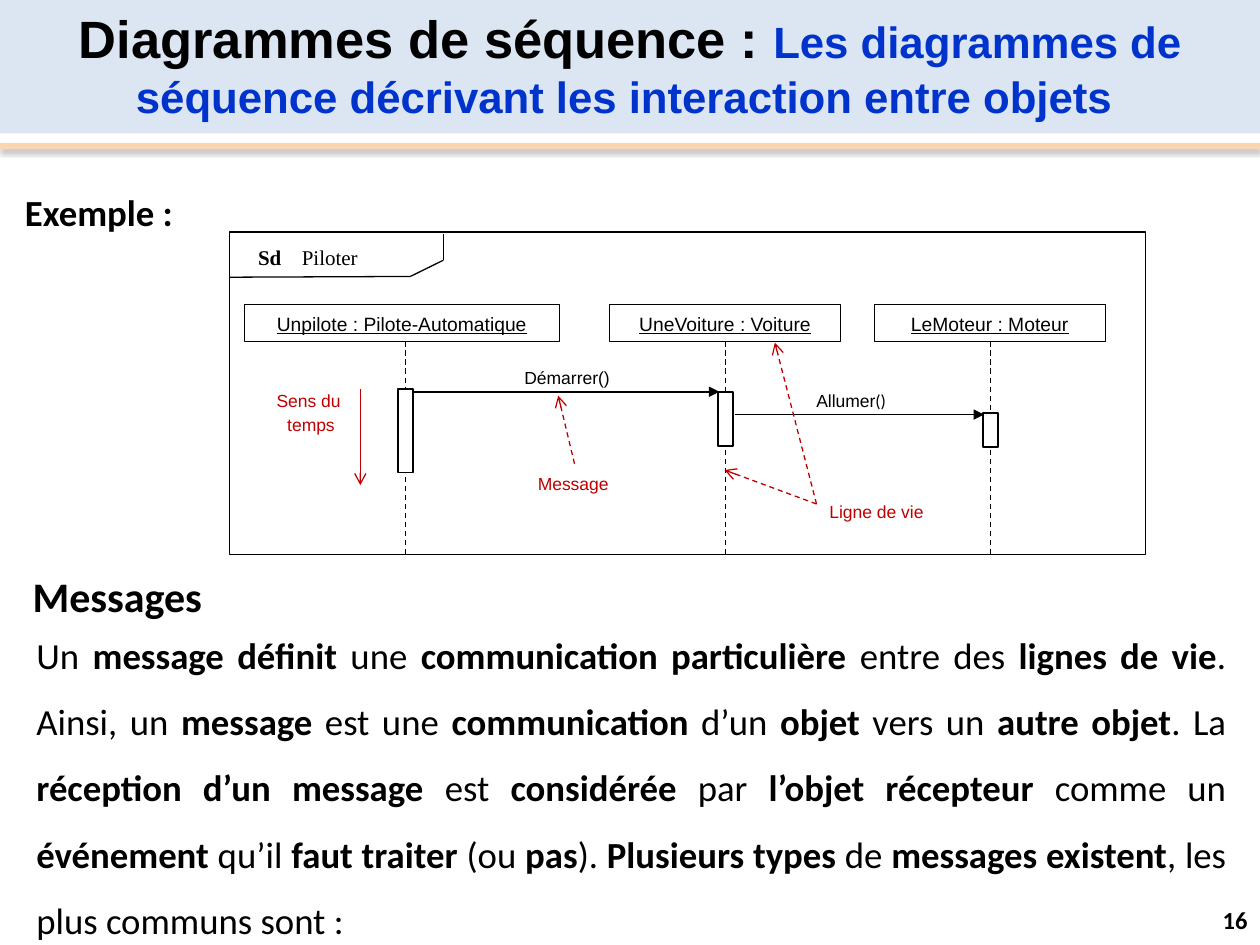
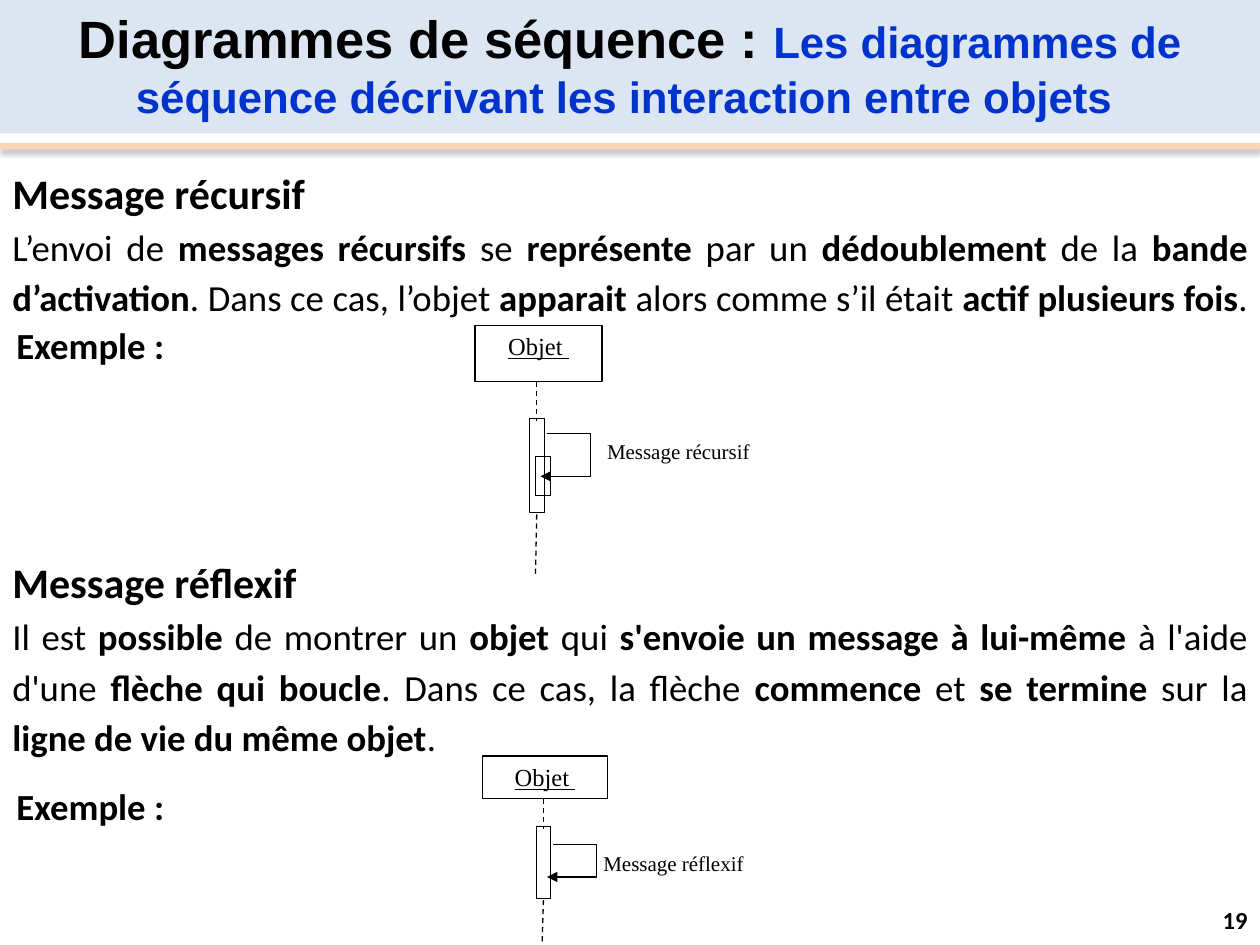
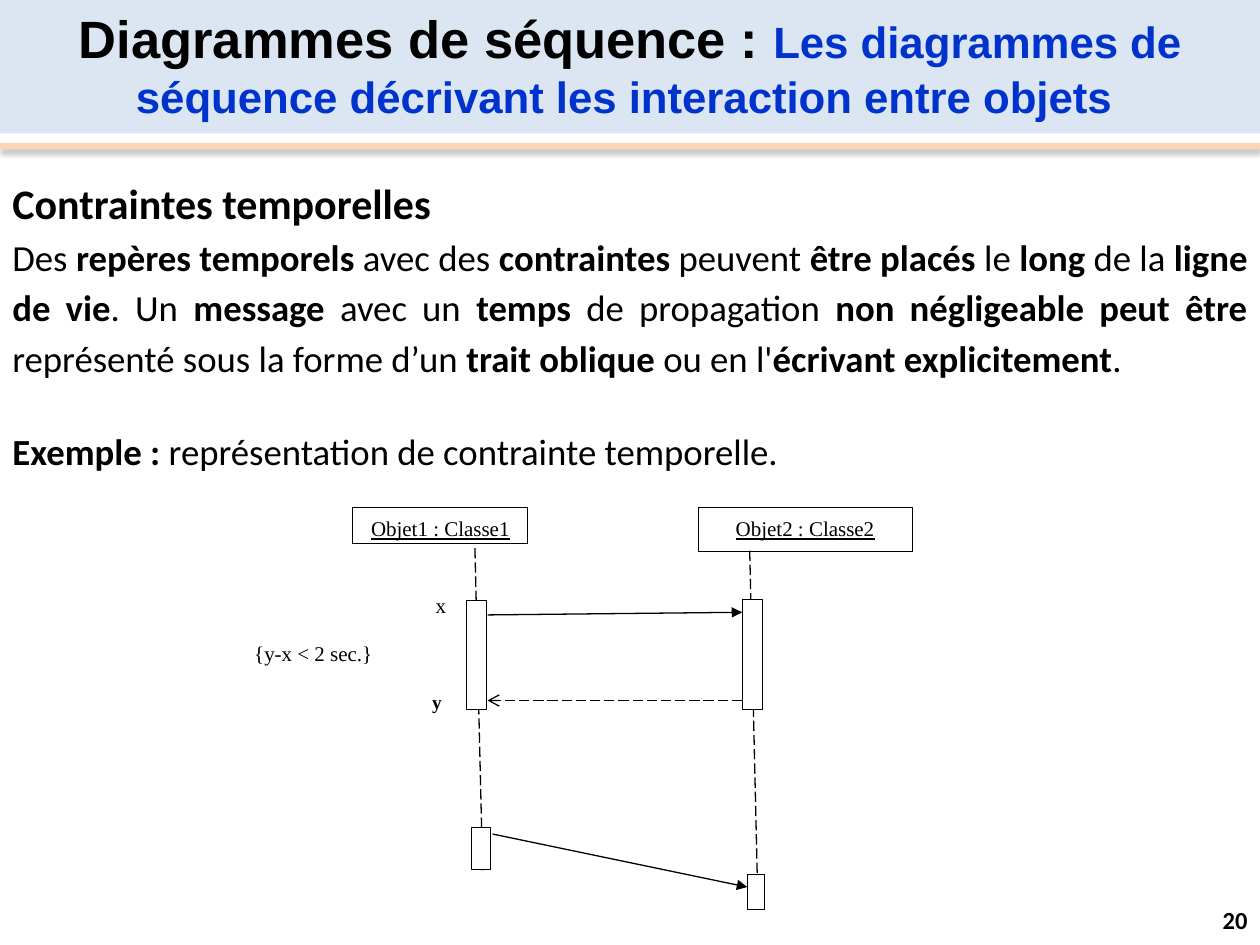
from pptx import Presentation
from pptx.dml.color import RGBColor
from pptx.enum.dml import MSO_LINE
from pptx.enum.shapes import MSO_CONNECTOR as CONNECTOR, MSO_SHAPE as SHAPE
from pptx.enum.text import MSO_ANCHOR as ANCHOR, PP_ALIGN as ALIGN
from pptx.oxml.ns import qn
from pptx.util import Pt
from lxml.etree import SubElement
from itertools import pairwise

BLACK = RGBColor(0x00, 0x00, 0x00)
WHITE = RGBColor(0xFF, 0xFF, 0xFF)
RED = RGBColor(0xC0, 0x00, 0x00)
BLUE = RGBColor(0x00, 0x33, 0xCC)
PALE_BLUE = RGBColor(0xDC, 0xE6, 0xF2)
PEACH = RGBColor(0xFC, 0xD5, 0xB5)

BODY, SANS, SERIF = "Calibri", "Arial", "Times New Roman"
WIDTH, HEIGHT = 720, 540
LOOP_BACK, LOOP_REACH = 3.6, 24.8


class Deck:
    """Hold the shared style and the current slide."""

    def __init__(self):
        self.presentation = Presentation()
        self.presentation.slide_width = Pt(WIDTH)
        self.presentation.slide_height = Pt(HEIGHT)
        self.slide = None

    def new_slide(self, number):
        self.slide = self.presentation.slides.add_slide(self.presentation.slide_layouts[6])
        page = self.text_box(552, 511, 168, 29)
        page.vertical_anchor = ANCHOR.MIDDLE
        self.add_text(page, f"*{number}*", 14, align=ALIGN.RIGHT)

        rule = self.line((0, 83.5), (WIDTH, 83.5), PEACH, 3)
        effects = rule.element.spPr.find(qn("a:effectLst"))
        shadow = SubElement(effects, qn("a:outerShdw"), blurRad=str(Pt(3.1)),
                            dist=str(Pt(1.8)), dir="5400000", rotWithShape="0")
        color = SubElement(shadow, qn("a:srgbClr"), val=str(BLACK))
        SubElement(color, qn("a:alpha"), val="35000")

        band = self.box(0, -2.9, WIDTH, 79.2, PALE_BLUE, None).text_frame
        band.vertical_anchor = ANCHOR.MIDDLE
        title = self.add_text(band, "*Diagrammes de séquence : *", 30, SANS, align=ALIGN.CENTER)
        self.add_run(title, "Les diagrammes de séquence décrivant les interaction entre objets ",
                     25, SANS, BLUE, bold=True)

    def add_run(self, paragraph, text, size, font=BODY, color=BLACK, bold=False, underline=False):
        run = paragraph.add_run()
        run.text = text
        run.font.name, run.font.size = font, Pt(size)
        run.font.bold, run.font.underline = bold, underline
        run.font.color.rgb = color

    def add_text(self, frame, markup, size, font=BODY, color=BLACK, align=ALIGN.JUSTIFY,
                 spacing=1.0, underline=False):
        """Add a paragraph in which asterisks switch bold on and off."""
        frame.word_wrap = True
        paragraph = frame.paragraphs[0]
        if paragraph.runs:
            paragraph = frame.add_paragraph()
        paragraph.alignment, paragraph.line_spacing = align, spacing
        for index, text in enumerate(markup.split("*")):
            if text:
                self.add_run(paragraph, text, size, font, color, index % 2 == 1, underline)
        return paragraph

    def text_box(self, left, top, width, height):
        return self.slide.shapes.add_textbox(Pt(left), Pt(top), Pt(width), Pt(height)).text_frame

    def section(self, top, height, heading, body):
        frame = self.text_box(0, top, WIDTH, height)
        self.add_text(frame, f"*{heading}*", 24, spacing=1.5)
        self.add_text(frame, body, 21, spacing=1.15)

    def paragraph_box(self, left, top, width, height, markup, size=21, spacing=1.15):
        self.add_text(self.text_box(left, top, width, height), markup, size, spacing=spacing)

    def box(self, left, top, width, height, fill=WHITE, weight=1.0):
        shape = self.slide.shapes.add_shape(SHAPE.RECTANGLE, Pt(left), Pt(top), Pt(width), Pt(height))
        shape.shadow.inherit = False
        if fill is None:
            shape.fill.background()
        else:
            shape.fill.solid()
            shape.fill.fore_color.rgb = fill
        if weight is None:
            shape.line.fill.background()
        else:
            shape.line.color.rgb = BLACK
            shape.line.width = Pt(weight)
        shape.text_frame.vertical_anchor = ANCHOR.TOP
        return shape

    def label(self, left, top, width, height, markup, size=12, font=SERIF, color=BLACK,
              align=ALIGN.LEFT, spacing=1.06):
        frame = self.box(left, top, width, height, WHITE, None).text_frame
        return [self.add_text(frame, line, size, font, color, align, spacing)
                for line in markup.split("\n")]

    def participant(self, left, top, width, height, name, size=12, font=SERIF,
                    spacing=1.06, weight=0.5):
        frame = self.box(left, top, width, height, WHITE, weight).text_frame
        self.add_text(frame, name, size, font, align=ALIGN.CENTER, spacing=spacing, underline=True)

    def line(self, start, end, color=BLACK, weight=0.75, dash=None, arrow=None,
             kind=CONNECTOR.STRAIGHT):
        connector = self.slide.shapes.add_connector(kind, *map(Pt, start + end))
        connector.line.color.rgb = color
        connector.line.width = Pt(weight)
        if dash:
            connector.line.dash_style = dash
        properties = connector.element.spPr
        if arrow:
            SubElement(properties.find(qn("a:ln")), qn("a:tailEnd"), type=arrow)
        SubElement(properties, qn("a:effectLst"))
        return connector

    def self_call(self, head, bar, loop_top, loop_bottom, life_end, label, text):
        self.label(*label, text, spacing=1.0)
        self.participant(*head, "Objet ", 14, spacing=1.0, weight=0.75)
        left, top, width, height = bar
        self.box(*bar, None, 0.75)
        center = left + width / 2
        self.line((center, head[1] + head[3]), (center, top + 1.5), dash=MSO_LINE.DASH)
        self.line((center, top + height + 1), (center - 0.7, life_end), dash=MSO_LINE.DASH)
        start = left + width + 1.5
        loop = self.line((start, loop_top), (start - LOOP_BACK, loop_bottom),
                         arrow="triangle", kind=CONNECTOR.ELBOW)
        guides = loop.element.spPr.find(qn("a:prstGeom")).find(qn("a:avLst"))
        bend = round(-100000 * LOOP_REACH / LOOP_BACK)
        SubElement(guides, qn("a:gd"), name="adj1", fmla=f"val {bend}")


def driving_slide(deck):
    deck.new_slide(16)
    deck.paragraph_box(7.2, 92.2, 705.6, 41.8, "*Exemple :*", spacing=1.5)
    deck.paragraph_box(11.5, 318.2, 364, 39, "*Messages*", 24)
    deck.paragraph_box(
        13.7, 345.6, 694, 194.4,
        "Un *message définit* une *communication particulière* entre des *lignes de vie*. "
        "Ainsi, un *message* est une *communication* d’un *objet* vers un *autre objet*. "
        "La *réception d’un message *est *considérée* par *l’objet récepteur *comme un "
        "*événement* qu’il *faut traiter *(ou *pas*). *Plusieurs types* de "
        "*messages existent*, les plus communs sont :", spacing=1.5)

    deck.box(131, 132.5, 523.5, 184.5, weight=0.75)
    frame_name = deck.text_box(140.4, 135.4, 91.4, 22.3)
    paragraph = deck.add_text(frame_name, "*Sd*\tPiloter", 12, SERIF, align=ALIGN.LEFT,
                              spacing=1.06)
    tabs = SubElement(paragraph._p.get_or_add_pPr(), qn("a:tabLst"))
    SubElement(tabs, qn("a:tab"), pos=str(Pt(25)), algn="l")
    for start, end in pairwise([(253.4, 134), (253.4, 148.7), (234.5, 158), (131, 158.4)]):
        deck.line(start, end)

    for left, top, width, height, text, color in (
        (145.4, 217.4, 61.9, 33.1, "Sens du\n temps", RED),
        (277.9, 204.5, 92.2, 18, "Démarrer()", BLACK),
        (289.4, 265, 76.3, 20.9, "Message", RED),
        (459.4, 280.8, 82.8, 21.6, "Ligne de vie", RED),
    ):
        deck.label(left, top, width, height, text, 10, SANS, color, ALIGN.CENTER, 1.15)
    call = deck.label(459.4, 217.4, 70.6, 18.7, "Allumer", 10, SANS, spacing=1.15)
    deck.add_run(call[0], "()", 10)

    for left, width, name, life, bar_top, bar_height in (
        (139.7, 180, "Unpilote : Pilote-Automatique", 231.8, 222.5, 47.5),
        (348.5, 131.8, "UneVoiture : Voiture", 414.5, 223.9, 31),
        (499.7, 131.8, "LeMoteur : Moteur", 565.9, 236.2, 19.4),
    ):
        deck.participant(left, 174.2, width, 20.9, name, 11, SANS)
        deck.line((life, 195.1), (life, 317), dash=MSO_LINE.DASH)
        deck.box(life - 4.3, bar_top, 8.6, bar_height)
    deck.line((236.1, 223.9), (411.1, 223.9), weight=1, arrow="triangle")
    deck.line((419.8, 236.9), (562.3, 236.9), weight=1, arrow="triangle")
    deck.line((205.9, 222.5), (205.9, 277.2), RED, arrow="arrow")
    for start, end in (
        ((328.3, 265), (319, 226.1)),
        ((466.6, 288), (442.8, 195.8)),
        ((466.6, 288), (414, 268.6)),
    ):
        deck.line(start, end, RED, dash=MSO_LINE.DASH, arrow="arrow")


def self_message_slide(deck):
    deck.new_slide(19)
    deck.section(
        77.8, 108, "Message récursif",
        "L’envoi de *messages récursifs* se *représente* par un *dédoublement* de la "
        "*bande d’activation*. Dans ce cas, l’objet *apparait* alors comme s’il était "
        "*actif plusieurs fois*. ")
    deck.section(
        300.2, 136.8, "Message réflexif",
        "Il est *possible* de montrer un *objet* qui *s'envoie un message à lui-même* "
        "à l'aide d'une *flèche qui boucle*. Dans ce cas, la flèche *commence* et "
        "*se termine* sur la *ligne de vie du même objet*.")
    for top in (177.1, 440.6):
        deck.paragraph_box(2.2, top, 365.8, 34.6, "*Exemple :*")
    deck.self_call((271.4, 185.8, 72.7, 32.4), (302.4, 239, 8.6, 54), 247.7, 272.2, 328.3,
                   (339.8, 247, 108.7, 25.2), "Message récursif")
    deck.box(306, 260.9, 8.6, 22.3, None)
    deck.self_call((275.8, 432, 71.3, 24.5), (306.4, 472.3, 8.3, 41), 482.4, 501.1, 538,
                   (337.7, 482.4, 106.6, 18.7), "Message réflexif")


def timing_slide(deck):
    deck.new_slide(20)
    deck.section(
        83.5, 136.8, "Contraintes temporelles ",
        "Des *repères temporels* avec des *contraintes* peuvent *être placés* le *long* "
        "de la *ligne de vie*. Un *message* avec un *temps* de propagation "
        "*non négligeable peut être* représenté sous la forme d’un *trait oblique *ou en "
        "l'*écrivant explicitement*.")
    deck.paragraph_box(0, 237.6, 466, 34.6,
                       "*Exemple : *représentation de contrainte temporelle.")

    deck.participant(201.6, 290.2, 100.1, 20.2, "Objet1 : Classe1")
    deck.participant(398.9, 290.2, 122.4, 25.2, "Objet2 : Classe2")
    deck.line((271.4, 313.2), (275.8, 497.5), dash=MSO_LINE.LONG_DASH)
    deck.line((428.4, 314.6), (432.7, 499), dash=MSO_LINE.LONG_DASH)
    for bar in (
        (266.4, 342.9, 11.5, 62.6),
        (424.1, 342.7, 11.5, 62.6),
        (269.3, 473, 10.8, 23.8),
        (427, 499.7, 10.1, 20.2),
    ):
        deck.box(*bar, weight=0.5)
    deck.label(241.9, 334.1, 23.8, 20.2, "x")
    deck.label(239.8, 390.2, 23.8, 20.2, "*y*", 11)
    deck.label(138.2, 361.4, 87.1, 23.8, "{y-x < 2 sec.}")
    deck.line((281.5, 476.6), (427, 506.9), arrow="triangle")
    deck.line((278.6, 351.4), (424.1, 349.9), arrow="triangle")
    deck.line((424.1, 400.3), (278.6, 400.3), dash=MSO_LINE.LONG_DASH, arrow="arrow")


def main():
    deck = Deck()
    driving_slide(deck)
    self_message_slide(deck)
    timing_slide(deck)
    deck.presentation.save("out.pptx")


if __name__ == "__main__":
    main()
